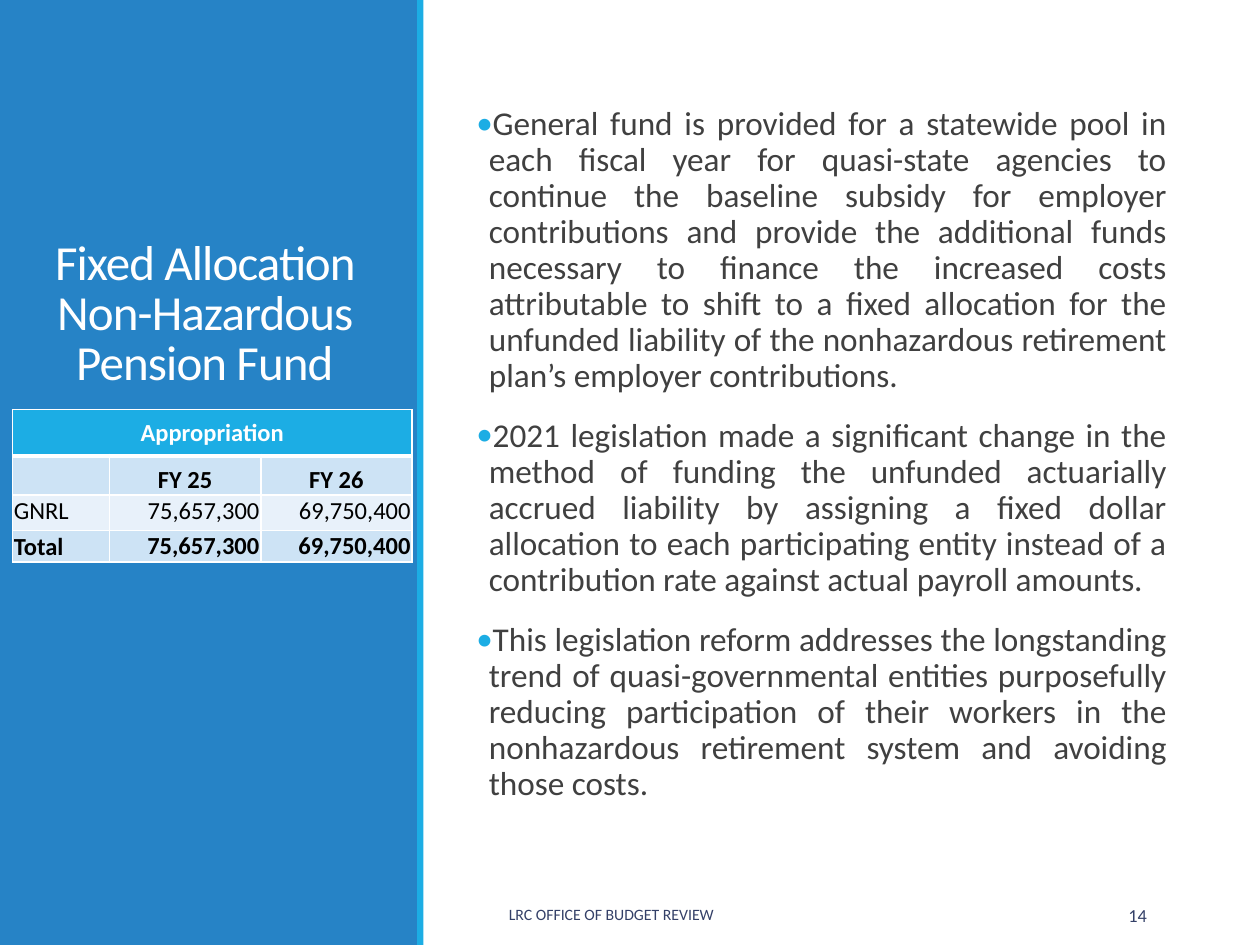
"""Build the slide on the fixed allocation pension fund."""
from lxml.etree import SubElement
from pptx import Presentation
from pptx.dml.color import RGBColor
from pptx.enum.shapes import MSO_SHAPE
from pptx.enum.text import MSO_ANCHOR, PP_ALIGN
from pptx.oxml import parse_xml
from pptx.oxml.ns import nsdecls, qn
from pptx.util import Inches, Pt

BLUE = RGBColor(0x26, 0x83, 0xC6)
CYAN = RGBColor(0x1C, 0xAD, 0xE4)
NAVY = RGBColor(0x34, 0x40, 0x68)
GRAY = RGBColor(0x40, 0x40, 0x40)
PALE = RGBColor(0xE8, 0xF1, 0xFA)
SOFT = RGBColor(0xCD, 0xE3, 0xF5)
WHITE = RGBColor(0xFF, 0xFF, 0xFF)
BLACK = RGBColor(0, 0, 0)
LEFT, MID, RIGHT, JUST = PP_ALIGN.LEFT, PP_ALIGN.CENTER, PP_ALIGN.RIGHT, PP_ALIGN.JUSTIFY
TOP, CENTER, BASE = MSO_ANCHOR.TOP, MSO_ANCHOR.MIDDLE, MSO_ANCHOR.BOTTOM

TITLE = "Fixed Allocation Non-Hazardous Pension Fund"
POINTS = [
    "General fund is provided for a statewide pool in each fiscal year for "
    "quasi-state agencies to continue the baseline subsidy for employer "
    "contributions and provide the additional funds necessary to finance the "
    "increased costs attributable to shift to a fixed allocation for the unfunded "
    "liability of the nonhazardous retirement plan’s employer contributions.",
    "2021 legislation made a significant change in the method of funding the "
    "unfunded actuarially accrued liability by assigning a fixed dollar allocation "
    "to each participating entity instead of a contribution rate against actual "
    "payroll amounts.",
    "This legislation reform addresses the longstanding trend of "
    "quasi-governmental entities purposefully reducing participation of their "
    "workers in the nonhazardous retirement system and avoiding those costs.",
]
BANDS = [((0, 0, 3.32, 7.5), BLUE), ((3.31, 0, 0.05, 7.5), CYAN)]
NOTES = [
    ("LRC OFFICE OF BUDGET REVIEW", (3.94, 7.06, 3.81, 0.4), 9, LEFT),
    ("14", (8.12, 7.06, 1.08, 0.4), 10.5, RIGHT),
]
COLS = [0.77, 1.2, 1.2]
ROWS = [
    (["Appropriation", "", ""], 0.37, CYAN, WHITE, True, (MID,) * 3, (CENTER,) * 3),
    (["", "FY 25", "FY 26"], 0.27, SOFT, BLACK, True, (MID,) * 3, (BASE,) * 3),
    (["GNRL", "75,657,300", "69,750,400"], 0.28, PALE, BLACK, False,
     (LEFT, RIGHT, RIGHT), (TOP,) * 3),
    (["Total", "75,657,300", "69,750,400"], 0.25, SOFT, BLACK, True,
     (LEFT, RIGHT, RIGHT), (BASE, TOP, TOP)),
]


def apply(item, **form):
    for name, value in form.items():
        setattr(item, name, value)


def write(para, text, size, color, bold=False, **form):
    apply(para, **form)
    run = para.add_run()
    run.text = text
    apply(run.font, name="Calibri", size=Pt(size), bold=bold)
    run.font.color.rgb = color
    return run


def add_box(slide, place, **form):
    frame = slide.shapes.add_textbox(*map(Inches, place)).text_frame
    apply(frame, word_wrap=True, **form)
    return frame


def add_dot(para):
    props = para._p.get_or_add_pPr()
    apply_set = {"marL": Inches(0.1), "indent": Inches(-0.1)}
    for name, value in apply_set.items():
        props.set(name, str(int(value)))
    tint = SubElement(props, qn("a:buClr"))
    SubElement(tint, qn("a:srgbClr"), val=str(CYAN))
    SubElement(props, qn("a:buFont"), typeface="Calibri")
    SubElement(props, qn("a:buChar"), char="•")


def add_edge(cell, row):
    wide = {"L": 1, "R": 1, "T": 3 if row == 1 else 1, "B": 3 if row == 0 else 1}
    props = cell._tc.get_or_add_tcPr()
    for spot, (side, width) in enumerate(wide.items()):
        props.insert(spot, parse_xml(
            f'<a:ln{side} {nsdecls("a")} w="{int(Pt(width))}"><a:solidFill>'
            f'<a:srgbClr val="{WHITE}"/></a:solidFill></a:ln{side}>'))


def add_grid(slide):
    place = (0.1, 3.25, sum(COLS), sum(row[1] for row in ROWS))
    grid = slide.shapes.add_table(len(ROWS), len(COLS), *map(Inches, place)).table
    for col, width in zip(grid.columns, COLS):
        col.width = Inches(width)
    for r, (texts, height, fill, color, bold, aligns, anchors) in enumerate(ROWS):
        grid.rows[r].height = Inches(height)
        for c, text in enumerate(texts):
            cell = grid.cell(r, c)
            edge = Inches(0.01)
            apply(cell, margin_left=edge, margin_top=edge, margin_right=edge,
                  margin_bottom=0, vertical_anchor=anchors[c])
            cell.fill.solid()
            cell.fill.fore_color.rgb = fill
            write(cell.text_frame.paragraphs[0], text, 14, color, bold,
                  alignment=aligns[c])
            add_edge(cell, r)
    grid.cell(0, 0).merge(grid.cell(0, 2))


def main():
    deck = Presentation()
    apply(deck, slide_width=Inches(10), slide_height=Inches(7.5))
    slide = deck.slides.add_slide(deck.slide_layouts[6])
    for place, color in BANDS:
        band = slide.shapes.add_shape(MSO_SHAPE.RECTANGLE, *map(Inches, place))
        band.shadow.inherit = False
        band.fill.solid()
        band.fill.fore_color.rgb = color
        band.line.fill.background()

    head = add_box(slide, (0, 0.65, 3.25, 2.5), vertical_anchor=BASE)
    run = write(head.paragraphs[0], TITLE, 28, WHITE, alignment=MID, line_spacing=0.85)
    run.font._element.set("spc", "-50")

    body = add_box(slide, (3.78, 0.8, 5.48, 6.26), margin_left=0, margin_right=0)
    for i, text in enumerate(POINTS):
        para = body.add_paragraph() if i else body.paragraphs[0]
        write(para, text, 19, GRAY, alignment=JUST, line_spacing=0.9,
              space_before=Pt(12), space_after=Pt(2))
        add_dot(para)

    for text, place, size, align in NOTES:
        foot = add_box(slide, place, vertical_anchor=CENTER)
        write(foot.paragraphs[0], text, size, NAVY, alignment=align)
    add_grid(slide)
    deck.save("out.pptx")


if __name__ == "__main__":
    main()
